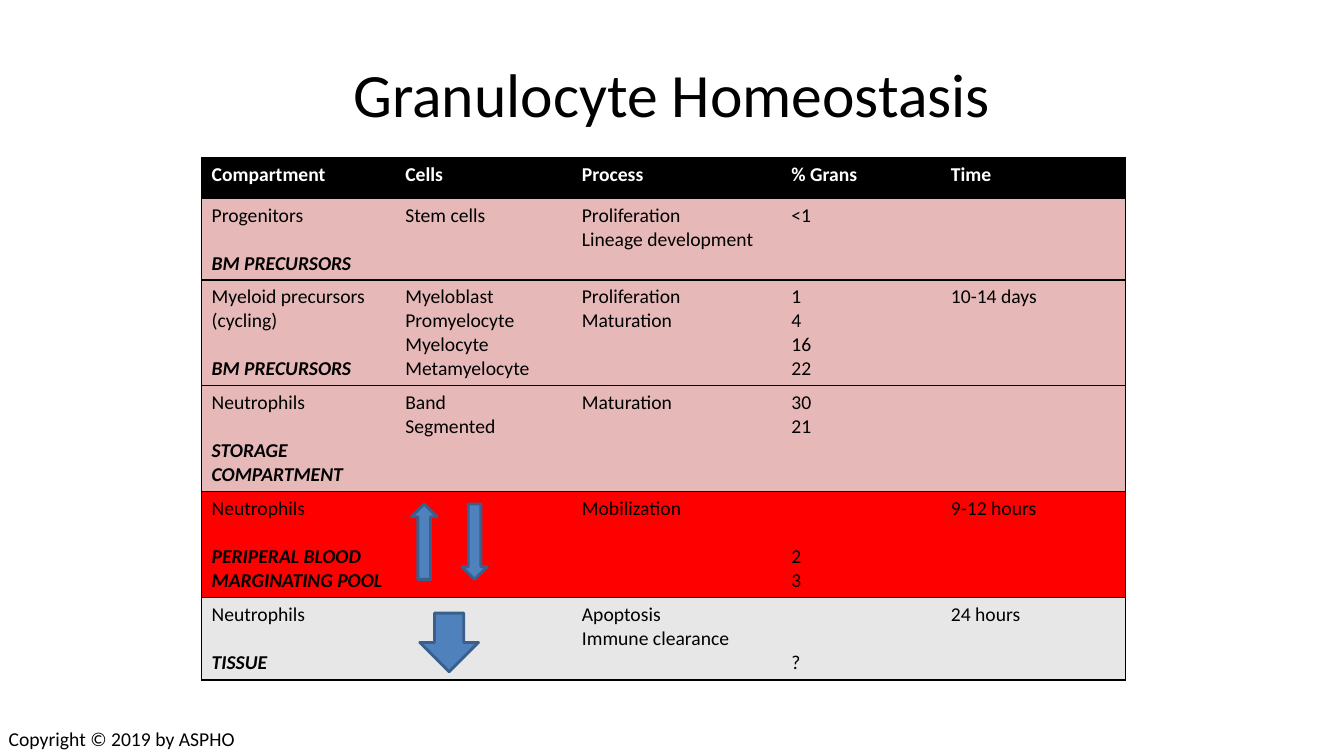
from lxml import etree
from pptx import Presentation, util as u
from pptx.dml.color import RGBColor
from pptx.enum import shapes, text
from pptx.oxml import ns

BLACK = RGBColor(0x00, 0x00, 0x00)
WHITE = RGBColor(0xFF, 0xFF, 0xFF)
PINK = RGBColor(0xE6, 0xB9, 0xB8)
RED = RGBColor(0xFF, 0x00, 0x00)
GREY = RGBColor(0xE7, 0xE7, 0xE7)
BLUE = RGBColor(0x4F, 0x81, 0xBD)
DARK_BLUE = RGBColor(0x3A, 0x5F, 0x8C)

HEADER = ["Compartment", "Cells", "Process", "% Grans", "Time"]
COL_WIDTHS = [4.88, 4.45, 5.28, 4.02, 4.65]
ROW_HEIGHTS = [1.04, 2.04, 2.67, 2.67, 2.67, 2.07]

# Fill, compartment, location label, other columns, lines the % column is lowered by
ROWS = [
    (PINK, "Progenitors", "BM PRECURSORS",
     ["Stem cells", "Proliferation\nLineage development", "<1", ""], 0),
    (PINK, "Myeloid precursors\n(cycling)", "BM PRECURSORS",
     ["Myeloblast\nPromyelocyte\nMyelocyte\nMetamyelocyte",
      "Proliferation\nMaturation", "1\n4\n16\n22", "10-14 days"], 0),
    (PINK, "Neutrophils", "STORAGE COMPARTMENT",
     ["Band\nSegmented", "Maturation", "30\n21", ""], 0),
    (RED, "Neutrophils", "PERIPERAL BLOOD\nMARGINATING POOL",
     ["", "Mobilization", "2\n3", "9-12 hours"], 2),
    (GREY, "Neutrophils", "TISSUE",
     ["", "Apoptosis\nImmune clearance", "?", "24 hours"], 2),
]


class SlideBuilder:
    font = "Calibri"
    size = 14
    line_height = 17.1
    border = 1

    def __init__(self, slide):
        self.s = slide

    def run(self, p, content, size=None, color=BLACK, bold=False, italic=False):
        r = p.add_run()
        r.text = content
        f = r.font
        f.name, f.size, f.bold, f.italic = self.font, u.Pt(size or self.size), bold, italic
        f.color.rgb = color

    def lines(self, tf, content, gap=0, **style):
        """Adds one paragraph per line, the first one after a gap in lines."""
        for i, line in enumerate(content.split("\n")):
            p = tf.paragraphs[0] if not tf.text else tf.add_paragraph()
            if gap and i == 0:
                p.space_before = u.Pt(gap * self.line_height)
            self.run(p, line, **style)

    def textbox(self, x, y, w, h, content, size=None, centered=False, wrap=True):
        sp = self.s.shapes.add_textbox(u.Cm(x), u.Cm(y), u.Cm(w), u.Cm(h))
        tf = sp.text_frame
        tf.word_wrap = wrap
        self.lines(tf, content, size=size)
        if centered:
            tf.vertical_anchor = text.MSO_ANCHOR.MIDDLE
            tf.paragraphs[0].alignment = text.PP_ALIGN.CENTER

    def arrow(self, x, y, w, h, rotation=0):
        sp = self.s.shapes.add_shape(shapes.MSO_SHAPE.DOWN_ARROW,
                                     u.Cm(x), u.Cm(y), u.Cm(w), u.Cm(h))
        sp.rotation = rotation
        sp.shadow.inherit = False
        sp.fill.solid()
        sp.fill.fore_color.rgb = BLUE
        sp.line.color.rgb = DARK_BLUE
        sp.line.width = u.Pt(2)

    def cell_style(self, cell, fill, sides):
        tc_pr = cell._tc.get_or_add_tcPr()
        for side in "LRTB":
            ln = etree.SubElement(tc_pr, ns.qn("a:ln" + side), w=str(u.Pt(self.border)))
            if side in sides:
                solid = etree.SubElement(ln, ns.qn("a:solidFill"))
                etree.SubElement(solid, ns.qn("a:srgbClr"), val=str(BLACK))
            else:
                etree.SubElement(ln, ns.qn("a:noFill"))
        cell.fill.solid()
        cell.fill.fore_color.rgb = fill

    def table(self, x, y, widths, heights):
        table = self.s.shapes.add_table(
            len(heights), len(widths), u.Cm(x), u.Cm(y),
            u.Cm(sum(widths)), u.Cm(sum(heights))).table
        for col, width in zip(table.columns, widths):
            col.width = u.Cm(width)
        for row, height in zip(table.rows, heights):
            row.height = u.Cm(height)
        fills = [BLACK] + [row[0] for row in ROWS]
        last = len(widths) - 1
        for r, fill in enumerate(fills):
            for c in range(len(widths)):
                sides = "TB" + ("L" if c == 0 else "") + ("R" if c == last else "")
                self.cell_style(table.cell(r, c), fill, sides)
        return table


def main():
    prs = Presentation()
    prs.slide_width, prs.slide_height = u.Cm(33.87), u.Cm(19.05)
    b = SlideBuilder(prs.slides.add_slide(prs.slide_layouts[6]))

    # Title
    b.textbox(1.7, 0.76, 30.48, 3.18, "Granulocyte Homeostasis", size=44, centered=True)

    # Compartment table
    table = b.table(5.08, 3.97, COL_WIDTHS, ROW_HEIGHTS)
    for c, heading in enumerate(HEADER):
        b.lines(table.cell(0, c).text_frame, heading, color=WHITE, bold=True)
    for r, (_, compartment, label, others, lowered) in enumerate(ROWS, 1):
        first = table.cell(r, 0).text_frame
        b.lines(first, compartment)
        b.lines(first, label, gap=1, bold=True, italic=True)
        for c, content in enumerate(others, 1):
            if content:
                b.lines(table.cell(r, c).text_frame, content)
        grans = table.cell(r, HEADER.index("% Grans"))
        grans.margin_top += u.Pt(lowered * b.line_height)

    # Arrows for exchange with the marginating pool and exit to tissue
    b.arrow(11.64, 12.7, 0.64, 1.9)
    b.arrow(10.37, 12.7, 0.64, 1.9, rotation=180)
    b.arrow(10.58, 15.45, 1.48, 1.48)

    # Copyright line
    b.textbox(-0.03, 18.19, 6.3, 0.86, "Copyright © 2019 by ASPHO", wrap=False)

    prs.save("out.pptx")


if __name__ == "__main__":
    main()
